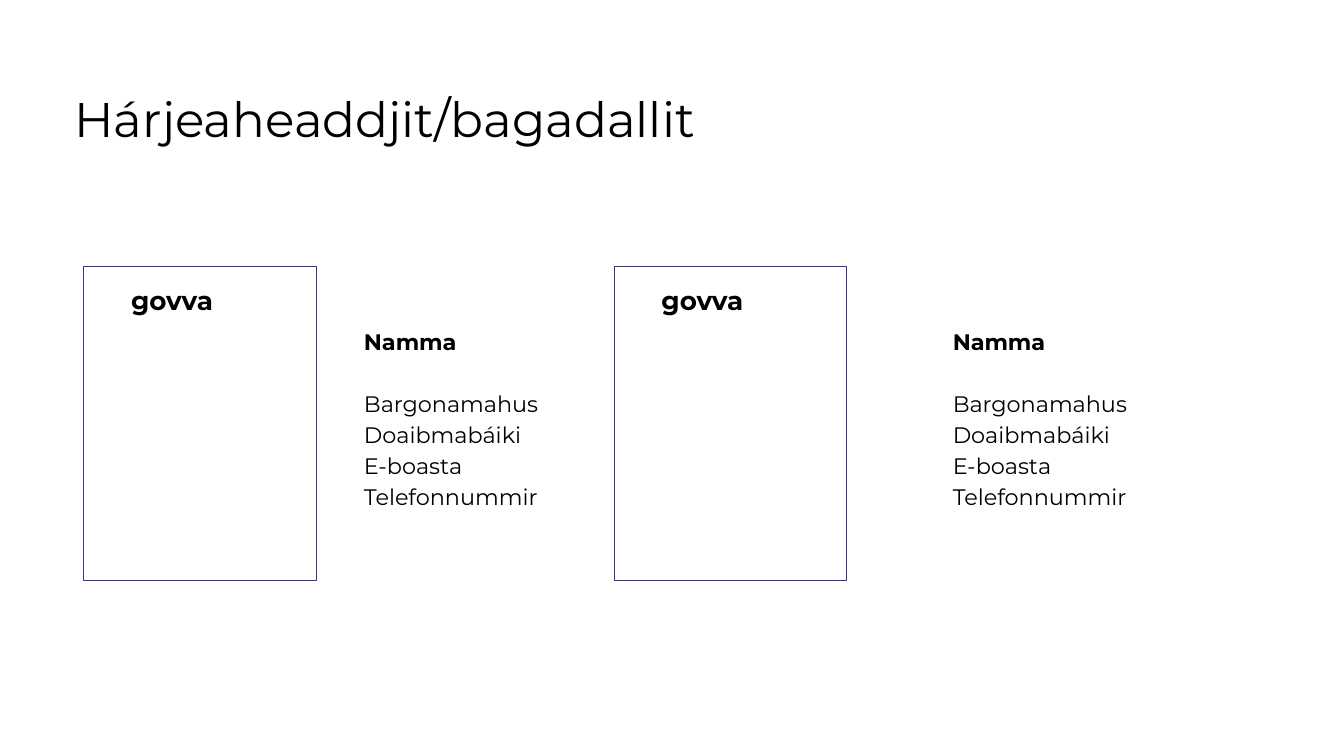
"""Build the slide of supervisors and advisers with two contact cards."""
from pptx import Presentation
from pptx.dml.color import RGBColor
from pptx.enum.shapes import MSO_SHAPE
from pptx.enum.text import MSO_ANCHOR, PP_ALIGN
from pptx.util import Inches, Pt

RECTANGLE = MSO_SHAPE.RECTANGLE
TOP, MIDDLE = MSO_ANCHOR.TOP, MSO_ANCHOR.MIDDLE
LEFT = PP_ALIGN.LEFT
FONT = "Montserrat"


def color(value):
    return RGBColor.from_string(value)


def write(shape, text, size, bold_first=False, inset=0.13, indent=0.0,
          spacing=1.0, gap=0, anchor=TOP):
    frame = shape.text_frame
    frame.word_wrap = True
    frame.vertical_anchor = anchor
    frame.margin_left = Inches(inset + indent)
    frame.margin_right = frame.margin_top = frame.margin_bottom = Inches(inset)
    frame.text = text
    for index, paragraph in enumerate(frame.paragraphs):
        paragraph.alignment = LEFT
        paragraph.line_spacing = spacing
        paragraph.font.name = FONT
        paragraph.font.size = Pt(size)
        paragraph.font.bold = bold_first and index == 0
        paragraph.font.color.rgb = color("000000")
    frame.paragraphs[0].space_after = Pt(gap)


presentation = Presentation()
presentation.slide_width = Inches(13.33)
presentation.slide_height = Inches(7.5)
slide = presentation.slides.add_slide(presentation.slide_layouts[6])

title = slide.shapes.add_textbox(Inches(0.64), Inches(0.66), Inches(10.44), Inches(1.03))
write(title, "Hárjeaheaddjit/bagadallit", 34.7, inset=0.1, anchor=MIDDLE)

contact = "Namma\nBargonamahus\nDoaibmabáiki\nE-boasta\nTelefonnummir"
for photo_left, contact_left in ((0.83, 3.14), (6.09, 8.98)):
    details = slide.shapes.add_textbox(
        Inches(contact_left), Inches(3.09), Inches(2.94), Inches(2.54))
    write(details, contact, 16, bold_first=True, indent=0.34, spacing=1.15, gap=22)

    photo = slide.shapes.add_shape(
        RECTANGLE, Inches(photo_left), Inches(2.64), Inches(2.31), Inches(3.12))
    photo.shadow.inherit = False
    photo.fill.background()
    photo.line.color.rgb = color("333399")
    photo.line.width = Pt(0.75)
    write(photo, "govva", 18.7, bold_first=True, indent=0.34, spacing=1.15)

presentation.save("out.pptx")
